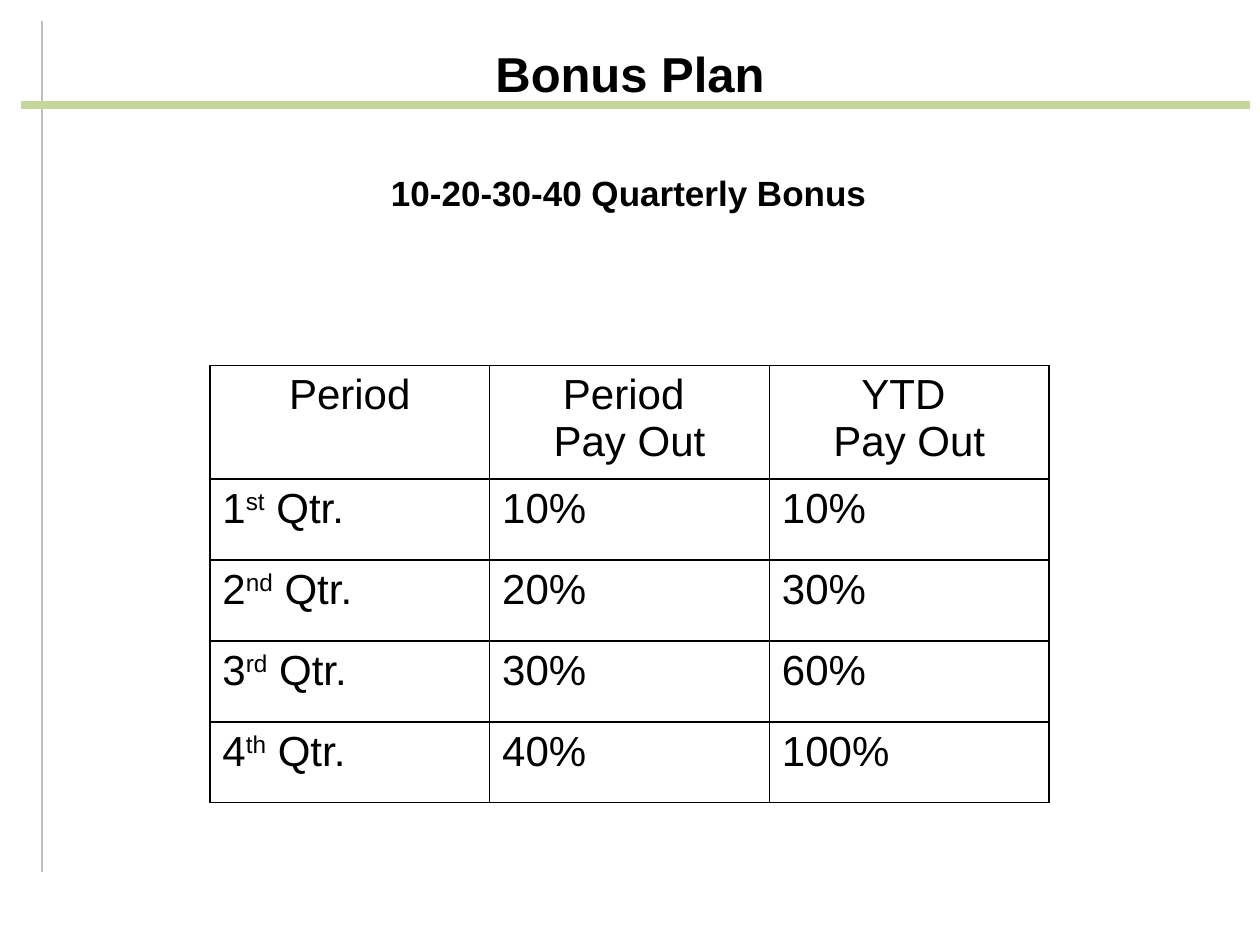
from dataclasses import dataclass
from itertools import accumulate

import lxml.etree
import pptx
import pptx.dml.color
import pptx.enum.shapes
import pptx.enum.text
import pptx.oxml
import pptx.oxml.ns
import pptx.util
from pptx.util import Cm, Pt

COLORS = {"text": "000000", "cell": "FFFFFF", "border": "000000",
          "side": "BFBFBF", "rule": "C3D69B"}
FONT = "Arial"
CENTER = pptx.enum.text.PP_ALIGN.CENTER
MIDDLE = pptx.enum.text.MSO_ANCHOR.MIDDLE


@dataclass
class Rule:
    left: float
    top: float
    right: float
    bottom: float
    color: str
    width: float


@dataclass
class Label:
    text: str
    left: float
    top: float
    width: float
    height: float
    size: int


@dataclass
class Quarter:
    number: int
    suffix: str
    payout: int


RULES = [Rule(0.84, 0.43, 0.84, 17.58, "side", 1),
         Rule(0.43, 2.11, 25.2, 2.11, "rule", 4.5)]
LABELS = [Label("Bonus Plan", 1.27, 0.2, 22.86, 2.54, 28),
          Label("10-20-30-40 Quarterly Bonus", 0.84, 3.25, 23.67, 1.27, 20)]
HEADS = ["Period", "Period \nPay Out", "YTD \nPay Out"]
QUARTERS = [Quarter(1, "st", 10), Quarter(2, "nd", 20),
            Quarter(3, "rd", 30), Quarter(4, "th", 40)]
COLUMN, HEAD_ROW, BODY_ROW = 5.64, 2.29, 1.63


def rgb(name: str) -> pptx.dml.color.RGBColor:
    return pptx.dml.color.RGBColor.from_string(COLORS[name])


def style(paragraph, size: int, bold: bool = False) -> None:
    font = paragraph.font
    font.name, font.size, font.bold = FONT, Pt(size), bold
    font.color.rgb = rgb("text")


def draw_rule(slide, rule: Rule) -> None:
    line = slide.shapes.add_connector(
        pptx.enum.shapes.MSO_CONNECTOR.STRAIGHT,
        Cm(rule.left), Cm(rule.top), Cm(rule.right), Cm(rule.bottom))
    line.line.color.rgb = rgb(rule.color)
    line.line.width = Pt(rule.width)
    lxml.etree.SubElement(line._element.spPr, pptx.oxml.ns.qn("a:effectLst"))


def draw_label(slide, label: Label) -> None:
    box = slide.shapes.add_textbox(Cm(label.left), Cm(label.top),
                                   Cm(label.width), Cm(label.height))
    frame = box.text_frame
    frame.word_wrap = True
    frame.vertical_anchor = MIDDLE
    frame.text = label.text
    paragraph = frame.paragraphs[0]
    paragraph.alignment = CENTER
    style(paragraph, label.size, bold=True)


def outline(cell) -> None:
    """Draw a thin line on all four sides of a cell."""
    sides = "".join(
        f'<a:{side} w="12700"><a:solidFill><a:srgbClr val="{COLORS["border"]}"/>'
        f'</a:solidFill></a:{side}>' for side in ("lnL", "lnR", "lnT", "lnB"))
    space = pptx.oxml.ns.nsdecls("a")
    borders = pptx.oxml.parse_xml(f"<a:tcPr {space}>{sides}</a:tcPr>")
    for place, border in enumerate(list(borders)):
        cell._tc.get_or_add_tcPr().insert(place, border)


def name_quarter(cell, quarter: Quarter) -> None:
    """Write the quarter with its ordinal suffix raised."""
    paragraph = cell.text_frame.paragraphs[0]
    for text in (str(quarter.number), quarter.suffix, " Qtr."):
        run = paragraph.add_run()
        run.text = text
        if text == quarter.suffix:
            run._r.get_or_add_rPr().set("baseline", "30000")


def draw_table(slide) -> None:
    rows, columns = len(QUARTERS) + 1, len(HEADS)
    height = HEAD_ROW + BODY_ROW * len(QUARTERS)
    table = slide.shapes.add_table(rows, columns, Cm(4.23), Cm(7.37),
                                   Cm(COLUMN * columns), Cm(height)).table
    table.first_row = table.horz_banding = False
    for column in table.columns:
        column.width = Cm(COLUMN)
    for index, row in enumerate(table.rows):
        row.height = Cm(BODY_ROW if index else HEAD_ROW)

    for index, head in enumerate(HEADS):
        frame = table.cell(0, index).text_frame
        frame.text = head
        for paragraph in frame.paragraphs:
            paragraph.alignment = CENTER
    totals = accumulate(quarter.payout for quarter in QUARTERS)
    for index, (quarter, total) in enumerate(zip(QUARTERS, totals), 1):
        name_quarter(table.cell(index, 0), quarter)
        table.cell(index, 1).text = f"{quarter.payout}%"
        table.cell(index, 2).text = f"{total}%"

    for cell in table.iter_cells():
        cell.fill.solid()
        cell.fill.fore_color.rgb = rgb("cell")
        outline(cell)
        for paragraph in cell.text_frame.paragraphs:
            style(paragraph, 24)


def main() -> None:
    deck = pptx.Presentation()
    deck.slide_width, deck.slide_height = Cm(25.4), Cm(19.05)
    slide = deck.slides.add_slide(deck.slide_layouts[6])
    for rule in RULES:
        draw_rule(slide, rule)
    for label in LABELS:
        draw_label(slide, label)
    draw_table(slide)
    deck.save("out.pptx")


if __name__ == "__main__":
    main()
